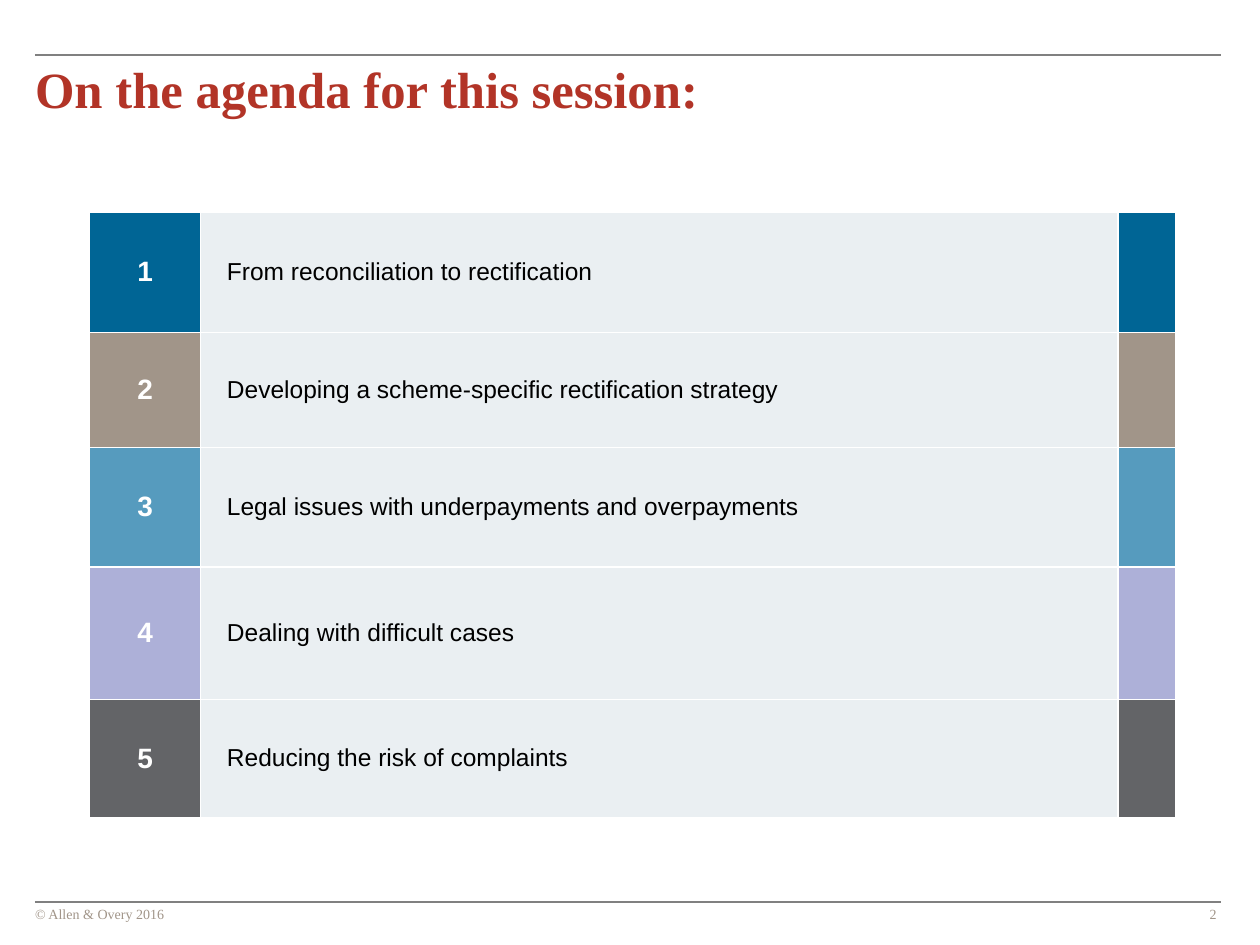
"""Build the agenda page with its numbered five-row table."""
from dataclasses import dataclass

from lxml.etree import SubElement
from pptx import Presentation
from pptx.dml.color import RGBColor
from pptx.enum.shapes import MSO_CONNECTOR
from pptx.enum.text import MSO_ANCHOR, PP_ALIGN
from pptx.oxml.ns import qn
from pptx.util import Pt


@dataclass(frozen=True)
class Theme:
    serif: str = "Times New Roman"
    sans: str = "Arial"
    title_size: float = 29
    number_size: float = 16
    topic_size: float = 14
    footer_size: float = 8
    title: str = "B23427"
    footer: str = "A19589"
    rule: str = "808080"
    panel: str = "EAEFF2"
    white: str = "FFFFFF"
    black: str = "000000"


class PageBuilder:
    def __init__(self, page, theme):
        self.page = page
        self.theme = theme

    def style(self, paragraph, font, size, color, bold=False, align=PP_ALIGN.LEFT):
        paragraph.alignment = align
        for span in paragraph.runs:
            span.font.name = font
            span.font.size = Pt(size)
            span.font.bold = bold
            span.font.color.rgb = RGBColor.from_string(color)

    def rule(self, left, right, top):
        line = self.page.shapes.add_connector(
            MSO_CONNECTOR.STRAIGHT, Pt(left), Pt(top), Pt(right), Pt(top))
        line.line.color.rgb = RGBColor.from_string(self.theme.rule)
        line.line.width = Pt(1)
        SubElement(line._element.spPr, qn("a:effectLst"))

    def text(self, text, left, top, width, height, size, color, **look):
        box = self.page.shapes.add_textbox(Pt(left), Pt(top), Pt(width), Pt(height))
        frame = box.text_frame
        frame.word_wrap = True
        frame.margin_left = frame.margin_top = frame.margin_right = frame.margin_bottom = 0
        frame.text = text
        self.style(frame.paragraphs[0], self.theme.serif, size, color, **look)

    def border(self, cell):
        properties = cell._tc.get_or_add_tcPr()
        for side in ("lnL", "lnR", "lnT", "lnB"):
            edge = SubElement(properties, qn(f"a:{side}"), w=str(Pt(1)))
            fill = SubElement(edge, qn("a:solidFill"))
            SubElement(fill, qn("a:srgbClr"), val=self.theme.white)

    def cell(self, cell, fill, text="", **look):
        self.border(cell)
        cell.fill.solid()
        cell.fill.fore_color.rgb = RGBColor.from_string(fill)
        cell.vertical_anchor = MSO_ANCHOR.MIDDLE
        cell.margin_left = cell.margin_right = Pt(15.12)
        cell.margin_top = cell.margin_bottom = Pt(7.92)
        if text:
            cell.text_frame.text = text
            self.style(cell.text_frame.paragraphs[0], self.theme.sans, **look)

    def agenda(self, topics, left, top, widths):
        theme = self.theme
        heights = [height for _, _, height in topics]
        table = self.page.shapes.add_table(
            len(topics), len(widths), Pt(left), Pt(top),
            Pt(sum(widths)), Pt(sum(heights))).table
        table.first_row = table.horz_banding = False
        for column, width in zip(table.columns, widths):
            column.width = Pt(width)
        for index, (topic, color, height) in enumerate(topics):
            row = table.rows[index]
            row.height = Pt(height)
            number, label, stripe = row.cells
            self.cell(number, color, str(index + 1), size=theme.number_size,
                      color=theme.white, bold=True, align=PP_ALIGN.CENTER)
            self.cell(label, theme.panel, topic, size=theme.topic_size, color=theme.black)
            self.cell(stripe, color)


def main():
    theme = Theme()
    deck = Presentation()
    deck.slide_width, deck.slide_height = Pt(720), Pt(540)
    builder = PageBuilder(deck.slides.add_slide(deck.slide_layouts[6]), theme)
    for top in (31.5, 515.5):
        builder.rule(20, 698, top)
    builder.text("© Allen & Overy 2016", 20, 517.7, 516, 9.4,
                 theme.footer_size, theme.footer)
    builder.text("2", 179.3, 517.7, 516, 9.4,
                 theme.footer_size, theme.footer, align=PP_ALIGN.RIGHT)
    builder.text("On the agenda for this session:", 20, 33.1, 675, 35.3,
                 theme.title_size, theme.title, bold=True)
    topics = [
        ("From reconciliation to rectification", "006595", 69),
        ("Developing a scheme-specific rectification strategy", "A19589", 65.6),
        ("Legal issues with underpayments and overpayments", "569BBE", 68.4),
        ("Dealing with difficult cases", "ADB0D8", 75.6),
        ("Reducing the risk of complaints", "636467", 67.6),
    ]
    builder.agenda(topics, 51.2, 121, (63.4, 524.2, 32.6))
    deck.save("out.pptx")


if __name__ == "__main__":
    main()
